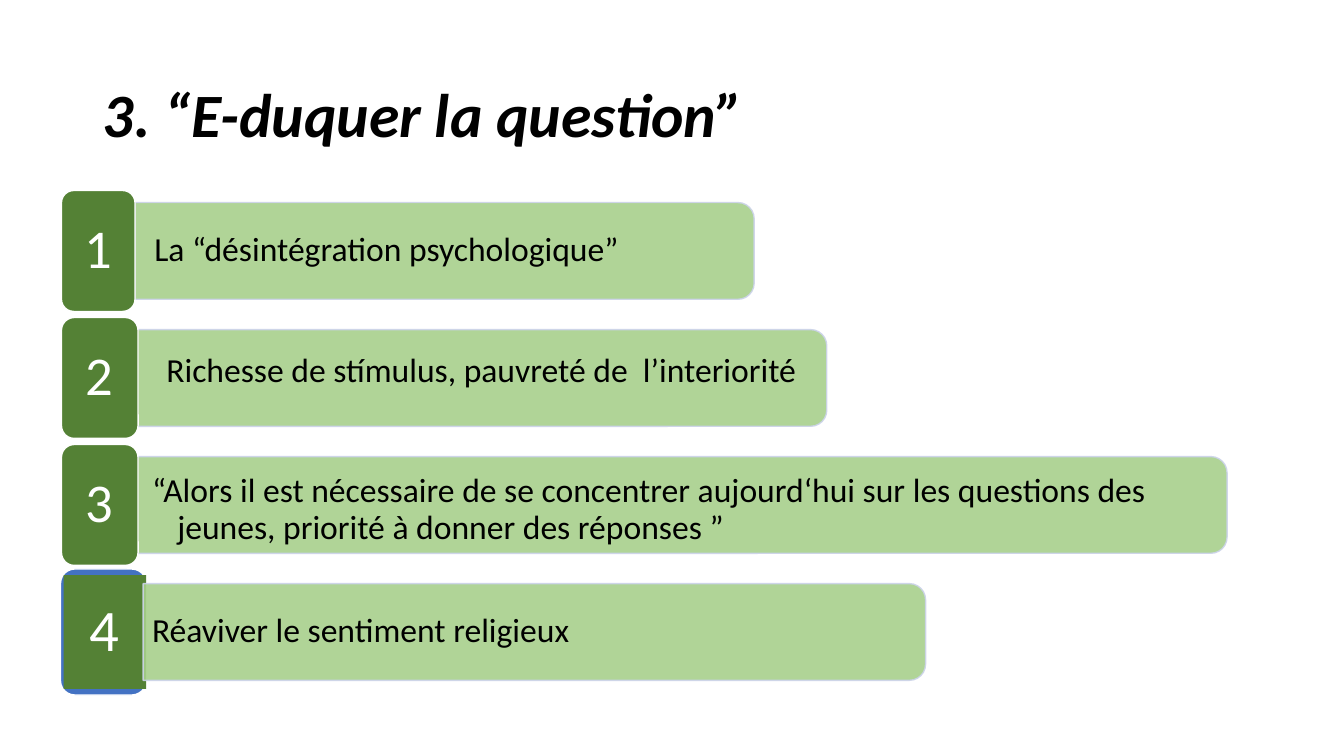
from lxml.etree import SubElement
from pptx import Presentation
from pptx.dml.color import RGBColor
from pptx.enum.shapes import MSO_SHAPE as Shape
from pptx.enum.text import MSO_ANCHOR as Anchor, PP_ALIGN as Align
from pptx.oxml.ns import qn
from pptx.util import Inches, Pt

COLORS = {
    "text": "000000",
    "white": "FFFFFF",
    "bar": "A8D08C",
    "bar_line": "CCD3EA",
    "tile": "548135",
    "tile_back": "4372C3",
}
FONT = "Calibri"
BAR_HEIGHT = 0.96
TEXT_HEIGHT = 0.86
FIRST_CENTER = 2.49
ROW_STEP = 1.26

# Bar: left, width. Text: left, width, upward shift, inset. Tile: left, width, height.
ROWS = [
    ("La “désintégration psychologique”",
     (1.34, 6.14), (1.34, 6.1, 0, 0.19), (0.61, 0.73, 1.2)),
    ("Richesse de stímulus, pauvreté de  l’interiorité",
     (1.36, 6.84), (1.46, 6.79, 0.06, 0.19), (0.61, 0.76, 1.2)),
    ("“Alors il est nécessaire de se concentrer aujourd‘hui sur les "
     "questions des jeunes, priorité à donner des réponses ”",
     (1.35, 10.82), (1.41, 10.78, -0.05, 0.1), (0.61, 0.76, 1.2)),
    ("Réaviver le sentiment religieux",
     (1.42, 7.76), (1.41, 7.73, 0, 0.1), (0.63, 0.82, 1.13)),
]


def rgb(name):
    return RGBColor.from_string(COLORS[name])


def set_frame(frame, inset_x, inset_y):
    frame.word_wrap = True
    frame.vertical_anchor = Anchor.MIDDLE
    frame.margin_left = frame.margin_right = Inches(inset_x)
    frame.margin_top = frame.margin_bottom = Inches(inset_y)


def write(frame, text, size, color, align=Align.LEFT):
    para = frame.paragraphs[0]
    para.alignment = align
    para.line_spacing = 0.9
    span = para.add_run()
    span.text = text
    span.font.name = FONT
    span.font.size = Pt(size)
    span.font.color.rgb = rgb(color)
    return para, span


def add_box(page, kind, left, top, width, height, fill, line=None):
    box = page.shapes.add_shape(
        kind, Inches(left), Inches(top), Inches(width), Inches(height))
    box.shadow.inherit = False
    box.fill.solid()
    box.fill.fore_color.rgb = rgb(fill)
    if line:
        box.line.color.rgb = rgb(line)
        box.line.width = Pt(1)
    else:
        box.line.fill.background()
    return box


def add_title(page, text):
    title = page.shapes.title
    title.left, title.top = Inches(0.92), Inches(0.44)
    title.width, title.height = Inches(11.5), Inches(1.45)
    set_frame(title.text_frame, 0.1, 0.05)
    span = write(title.text_frame, text, 44, "text")[1]
    span.font.bold = span.font.italic = True


def add_bar(page, left, width, center):
    """Add a bar rounded on its right side: an upright shape turned a quarter."""
    bar = add_box(page, Shape.ROUND_2_SAME_RECTANGLE,
                  left + (width - BAR_HEIGHT) / 2, center - width / 2,
                  BAR_HEIGHT, width, "bar", "bar_line")
    bar.rotation = 90
    bar.adjustments[0], bar.adjustments[1] = 0.167, 0
    for color in bar._element.spPr.iter(qn("a:srgbClr")):
        SubElement(color, qn("a:alpha"), val="90000")


def add_bar_text(page, text, left, width, center, inset):
    box = page.shapes.add_textbox(
        Inches(left), Inches(center - TEXT_HEIGHT / 2),
        Inches(width), Inches(TEXT_HEIGHT))
    set_frame(box.text_frame, inset, inset / 2)
    para = write(box.text_frame, text, 24, "text")[0]
    properties = para._p.get_or_add_pPr()
    properties.set("marL", str(Inches(0.25)))
    properties.set("indent", str(Inches(-0.25)))


def add_tile(page, number, left, width, height, center, framed):
    """Add a number tile; a framed one is square on a rounded backing."""
    top = center - height / 2
    if framed:
        backing = add_box(page, Shape.ROUNDED_RECTANGLE, 0.6, top - 0.06,
                          0.85, 1.25, "tile_back", "white")
        backing.adjustments[0] = 0.167
        tile = add_box(page, Shape.RECTANGLE, left, top, width, height, "tile")
    else:
        tile = add_box(page, Shape.ROUNDED_RECTANGLE, left, top,
                       width, height, "tile", "white")
        tile.adjustments[0] = 0.167
    set_frame(tile.text_frame, 0.1, 0.08)
    write(tile.text_frame, str(number), 42 if framed else 39, "white", Align.CENTER)


def add_row(page, number, row):
    text, bar, (left, width, shift, inset), tile = row
    center = FIRST_CENTER + (number - 1) * ROW_STEP
    framed = number == len(ROWS)
    if framed:
        add_tile(page, number, *tile, center, framed)
    add_bar(page, *bar, center)
    add_bar_text(page, text, left, width, center - shift, inset)
    if not framed:
        add_tile(page, number, *tile, center, framed)


def main():
    deck = Presentation()
    deck.slide_width, deck.slide_height = Inches(13.33), Inches(7.5)
    page = deck.slides.add_slide(deck.slide_layouts[5])
    add_title(page, "3. “E-duquer la question”")
    for number, row in enumerate(ROWS, 1):
        add_row(page, number, row)
    deck.save("out.pptx")


if __name__ == "__main__":
    main()
